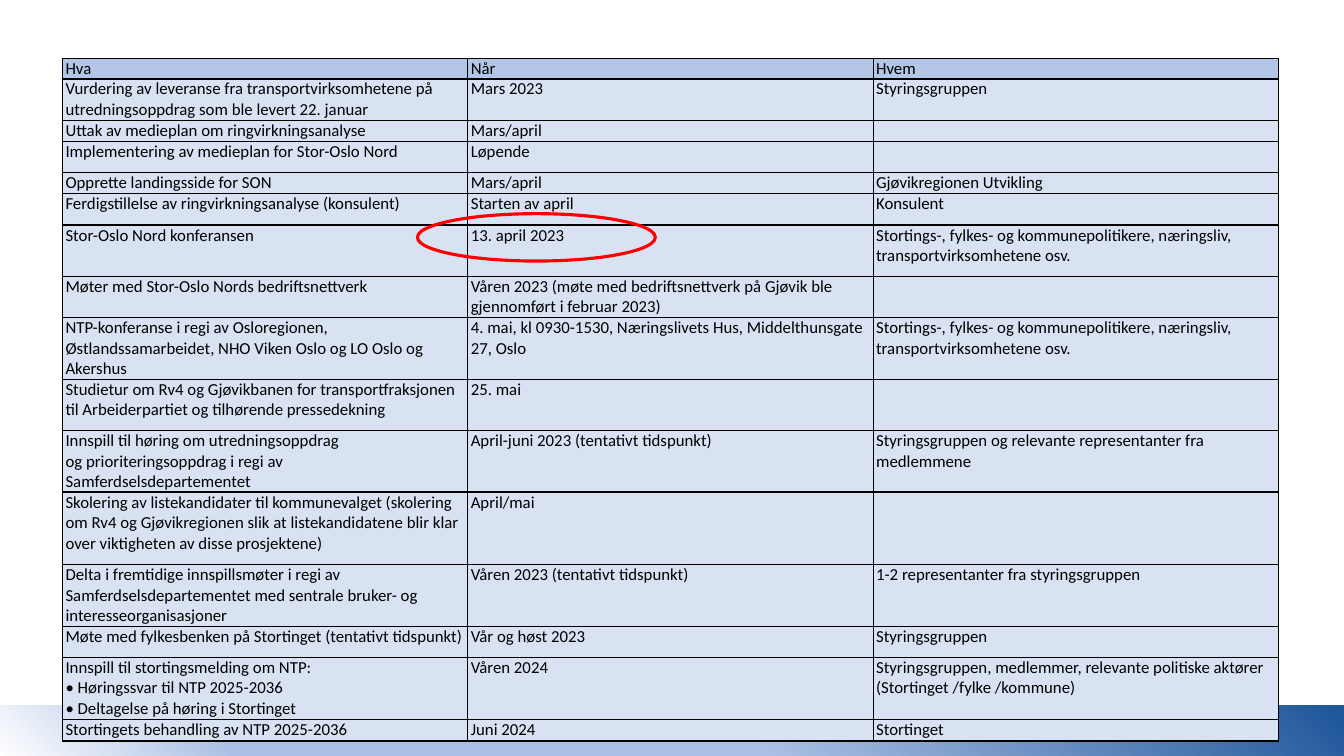
import pptx
import pptx.dml.color
import pptx.enum.shapes
import pptx.oxml
import pptx.oxml.ns
import pptx.util
from lxml import etree

WIDTH, HEIGHT = 13.33, 7.5
FONT, TEXT_SIZE = "Calibri", 12
HEADER_FILL, BODY_FILL, INK = "B4C6E7", "D9E2F3", "000000"
BAND_STOPS = [(0, "1E569A"), (45, "ABC0E4"), (83, "ABC0E4"), (100, "FFFFFF")]

POLITICIANS = ("Stortings-, fylkes- og kommunepolitikere, næringsliv, "
               "transportvirksomhetene osv.")
# Row height, what, when, who
PLAN = [
    (0.2, "Hva", "Når", "Hvem"),
    (0.41, "Vurdering av leveranse fra transportvirksomhetene på "
     "utredningsoppdrag som ble levert 22. januar", "Mars 2023", "Styringsgruppen"),
    (0.21, "Uttak av medieplan om ringvirkningsanalyse", "Mars/april", ""),
    (0.31, "Implementering av medieplan for Stor-Oslo Nord", "Løpende", ""),
    (0.21, "Opprette landingsside for SON", "Mars/april", "Gjøvikregionen Utvikling"),
    (0.31, "Ferdigstillelse av ringvirkningsanalyse (konsulent)",
     "Starten av april", "Konsulent"),
    (0.51, "Stor-Oslo Nord konferansen", "13. april 2023", POLITICIANS),
    (0.41, "Møter med Stor-Oslo Nords bedriftsnettverk",
     "Våren 2023 (møte med bedriftsnettverk på Gjøvik ble gjennomført i februar 2023)",
     ""),
    (0.61, "NTP-konferanse i regi av Osloregionen, Østlandssamarbeidet, "
     "NHO Viken Oslo og LO Oslo og Akershus",
     "4. mai, kl 0930-1530, Næringslivets Hus, Middelthunsgate 27, Oslo", POLITICIANS),
    (0.51, "Studietur om Rv4 og Gjøvikbanen for transportfraksjonen til "
     "Arbeiderpartiet og tilhørende pressedekning", "25. mai", ""),
    (0.61, "Innspill til høring om utredningsoppdrag\n"
     "og prioriteringsoppdrag i regi av Samferdselsdepartementet",
     "April-juni 2023 (tentativt tidspunkt)",
     "Styringsgruppen og relevante representanter fra medlemmene"),
    (0.72, "Skolering av listekandidater til kommunevalget (skolering om Rv4 og "
     "Gjøvikregionen slik at listekandidatene blir klar over viktigheten av disse "
     "prosjektene)", "April/mai", ""),
    (0.61, "Delta i fremtidige innspillsmøter i regi av Samferdselsdepartementet "
     "med sentrale bruker- og\ninteresseorganisasjoner",
     "Våren 2023 (tentativt tidspunkt)", "1-2 representanter fra styringsgruppen"),
    (0.31, "Møte med fylkesbenken på Stortinget (tentativt tidspunkt)",
     "Vår og høst 2023", "Styringsgruppen"),
    (0.62, "Innspill til stortingsmelding om NTP:\n• Høringssvar til NTP 2025-2036\n"
     "• Deltagelse på høring i Stortinget", "Våren 2024",
     "Styringsgruppen, medlemmer, relevante politiske aktører "
     "(Stortinget /fylke /kommune)"),
    (0.21, "Stortingets behandling av NTP 2025-2036", "Juni 2024", "Stortinget"),
]


def color(value):
    return pptx.dml.color.RGBColor.from_string(value)


def inches(*lengths):
    return [pptx.util.Inches(length) for length in lengths]


def add_child(parent, tag, **attributes):
    return etree.SubElement(parent, pptx.oxml.ns.qn(tag), **attributes)


def add_band(page, left, top, width, height):
    """Upright strip turned on its side, with a gradient from one corner."""
    upright_left = left + (width - height) / 2
    upright_top = top + (height - width) / 2
    band = page.shapes.add_shape(
        pptx.enum.shapes.MSO_SHAPE.RECTANGLE,
        *inches(upright_left, upright_top, height, width))
    band.rotation = 90
    band.shadow.inherit = False
    band.line.fill.background()
    band.fill.gradient()
    gradient = band.fill._xPr.find(pptx.oxml.ns.qn("a:gradFill"))
    for child in list(gradient):
        gradient.remove(child)
    stops = add_child(gradient, "a:gsLst")
    for position, value in BAND_STOPS:
        stop = add_child(stops, "a:gs", pos=str(position * 1000))
        add_child(stop, "a:srgbClr", val=value)
    circle = add_child(gradient, "a:path", path="circle")
    add_child(circle, "a:fillToRect", l="100000", b="100000")


def add_borders(cell):
    properties = cell._tc.get_or_add_tcPr()
    for side in ("a:lnL", "a:lnR", "a:lnT", "a:lnB"):
        line = add_child(properties, side, w=str(pptx.util.Pt(1)))
        fill = add_child(line, "a:solidFill")
        add_child(fill, "a:srgbClr", val=INK)


def fill_cell(cell, text, fill):
    cell.margin_left = cell.margin_right = pptx.util.Inches(0.03)
    cell.margin_top = cell.margin_bottom = 0
    add_borders(cell)
    cell.fill.solid()
    cell.fill.fore_color.rgb = color(fill)
    cell.text_frame.text = text
    for para in cell.text_frame.paragraphs:
        for span in para.runs:
            span.font.name = FONT
            span.font.size = pptx.util.Pt(TEXT_SIZE)
            span.font.color.rgb = color(INK)
        # Empty cells need the text size too, or their rows grow
        if not para.runs:
            add_child(para._p, "a:endParaRPr", sz=str(TEXT_SIZE * 100))


def add_plan(page, left, top, width):
    height = sum(row[0] for row in PLAN)
    frame = page.shapes.add_table(
        len(PLAN), 3, *inches(left, top, width, height))
    table = frame.table
    table.first_row = table.horz_banding = False
    for column in table.columns:
        column.width = pptx.util.Inches(width / 3)
    for index, (row_height, *texts) in enumerate(PLAN):
        table.rows[index].height = pptx.util.Inches(row_height)
        fill = BODY_FILL if index else HEADER_FILL
        for cell, text in zip(table.rows[index].cells, texts):
            fill_cell(cell, text, fill)


def add_date_ring(page, left, top, width, height):
    ring = page.shapes.add_shape(
        pptx.enum.shapes.MSO_SHAPE.OVAL, *inches(left, top, width, height))
    ring.shadow.inherit = False
    ring.fill.background()
    ring.line.color.rgb = color("FF0000")
    ring.line.width = pptx.util.Pt(2.25)


def main():
    deck = pptx.Presentation()
    deck.slide_width, deck.slide_height = inches(WIDTH, HEIGHT)
    page = deck.slides.add_slide(deck.slide_layouts[6])
    # Footer band, plan table, ring around the conference date
    add_band(page, 0, 7, WIDTH, 0.51)
    add_plan(page, 0.62, 0.58, 12.06)
    add_date_ring(page, 4.14, 2.12, 2.36, 0.47)
    deck.save("out.pptx")


if __name__ == "__main__":
    main()
